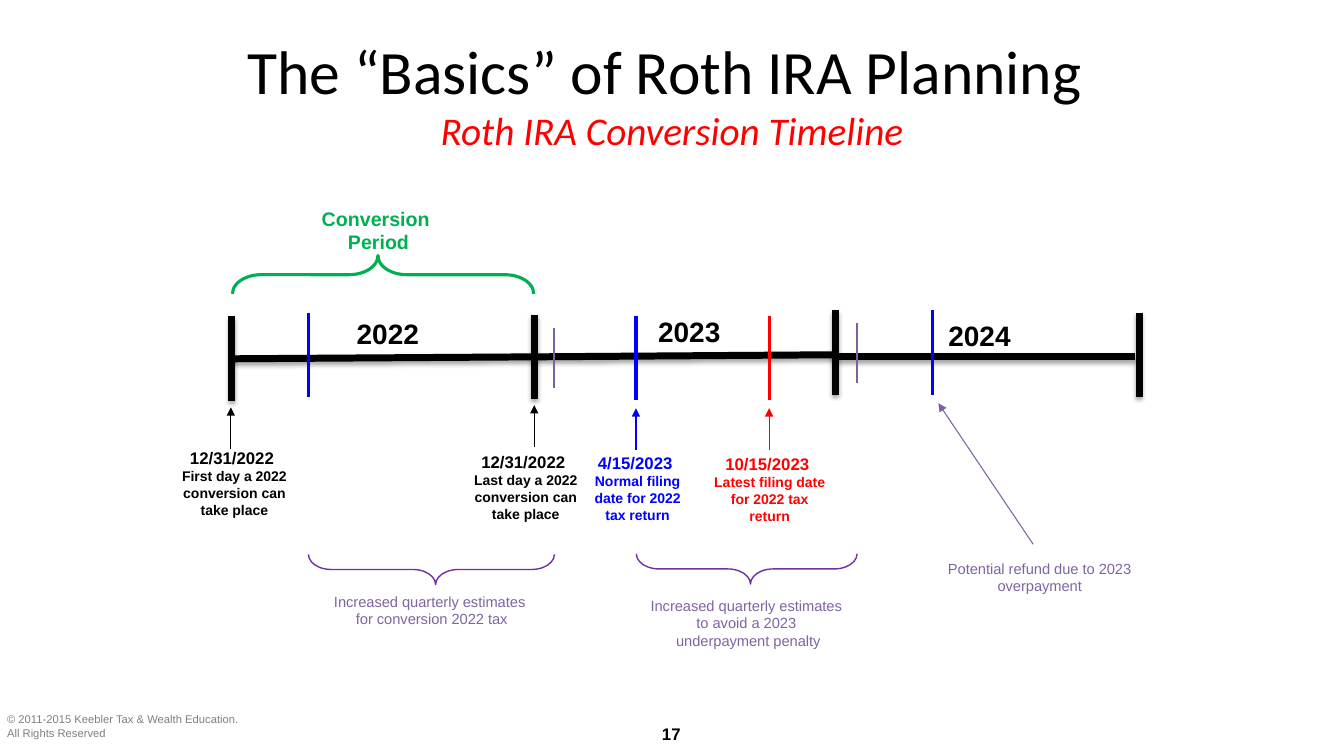
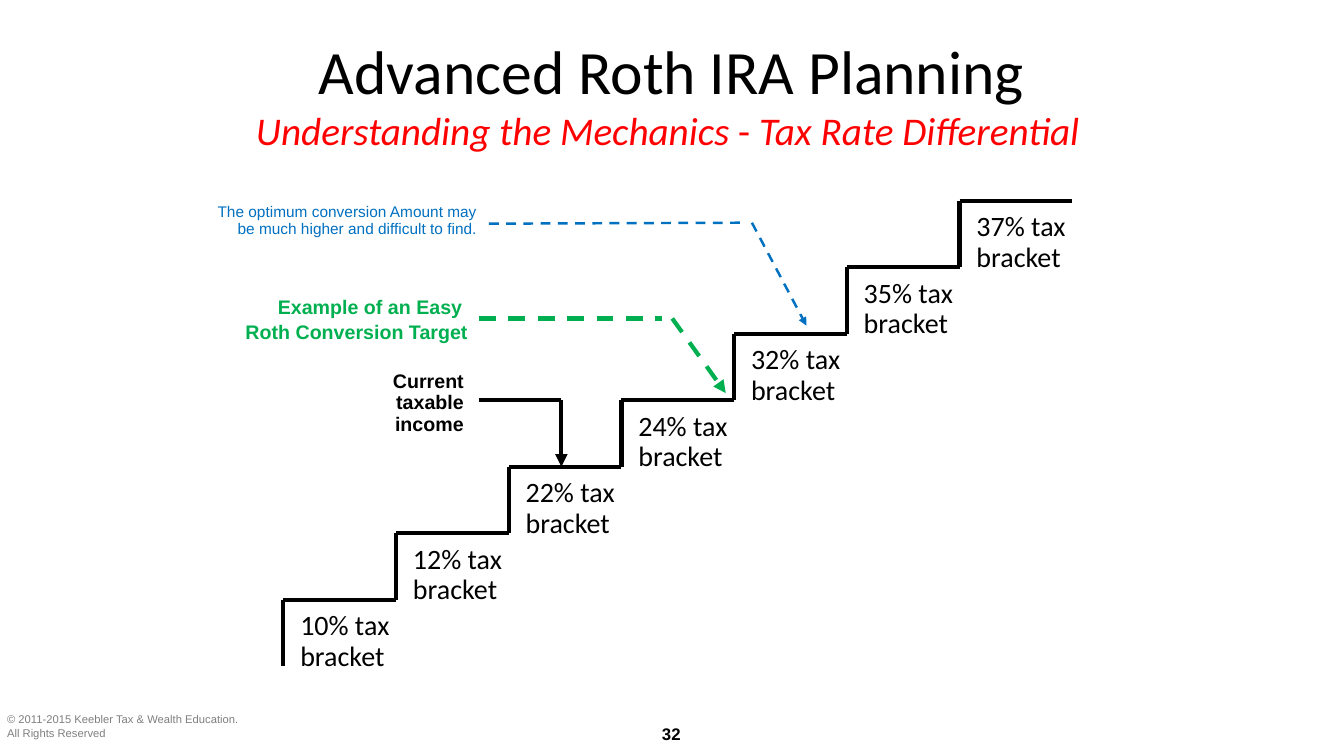
import lxml.etree
import pptx
import pptx.dml.color
import pptx.enum.dml
import pptx.enum.shapes
import pptx.enum.text
import pptx.oxml.ns
import pptx.util

Pt = pptx.util.Pt
qn = pptx.oxml.ns.qn
ALIGN = pptx.enum.text.PP_ALIGN

BLACK, RED, GREEN, BLUE = "000000", "FF0000", "00B050", "0000FF"
VIOLET, LILAC, PLUM, SKY, GREY = "7030A0", "7D60A0", "8064A2", "0070C0", "7F7F7F"

TITLE = {"name": "Calibri", "size": 44, "bold": False, "italic": False, "color": BLACK}
SUBTITLE = {**TITLE, "size": 28, "italic": True, "color": RED}
BRACKET = {"name": "Calibri", "size": 20, "color": BLACK}
NOTE = {"name": "Arial", "size": 10.5, "color": PLUM}
STRONG = {"name": "Arial", "size": 12, "bold": True, "color": BLACK}
YEAR = {**STRONG, "size": 20}
HEADING = {**STRONG, "size": 14}
FOOTER = {"name": "Arial", "size": 8, "color": GREY}


def colour(value):
    return pptx.dml.color.RGBColor.from_string(value)


def format_font(font, values):
    for name, value in values.items():
        if name == "color":
            font.color.rgb = colour(value)
        else:
            setattr(font, name, Pt(value) if name == "size" else value)


def add_text(page, place, lines, values, align=ALIGN.LEFT, spacing=1.0, gap=0):
    box = page.shapes.add_textbox(*(Pt(length) for length in place))
    frame = box.text_frame
    frame.word_wrap = True
    for index, line in enumerate(lines):
        para = frame.paragraphs[0] if index == 0 else frame.add_paragraph()
        para.alignment = align
        para.line_spacing = spacing
        para.space_before = Pt(gap if index else 0)
        text, changes = line if isinstance(line, tuple) else (line, {})
        span = para.add_run()
        span.text = text
        format_font(span.font, {**values, **changes})


def add_line(page, start, end, hue, width, arrow=False, dashed=False, shadow=False):
    kind = pptx.enum.shapes.MSO_CONNECTOR.STRAIGHT
    connector = page.shapes.add_connector(kind, *(Pt(length) for length in (*start, *end)))
    connector.line.color.rgb = colour(hue)
    connector.line.width = Pt(width)
    if dashed:
        connector.line.dash_style = pptx.enum.dml.MSO_LINE.DASH
    properties = connector.element.spPr
    if arrow:
        outline = properties.find(qn("a:ln"))
        lxml.etree.SubElement(outline, qn("a:tailEnd"), type="triangle")
    effects = lxml.etree.SubElement(properties, qn("a:effectLst"))
    if shadow:
        outer = lxml.etree.SubElement(
            effects, qn("a:outerShdw"), blurRad=str(Pt(3.1)), dist=str(Pt(1.8)),
            dir="5400000", rotWithShape="0")
        tint = lxml.etree.SubElement(outer, qn("a:srgbClr"), val=BLACK)
        lxml.etree.SubElement(tint, qn("a:alpha"), val="35000")


def add_brace(page, left, top, width, height, hue, weight, rotation):
    shift = (width - height) / 2
    brace = page.shapes.add_shape(
        pptx.enum.shapes.MSO_SHAPE.RIGHT_BRACE,
        Pt(left + shift), Pt(top - shift), Pt(height), Pt(width))
    brace.rotation = rotation
    brace.adjustments[0] = 0.75
    brace.adjustments[1] = 0.483
    brace.fill.background()
    brace.line.color.rgb = colour(hue)
    brace.line.width = Pt(weight)
    brace.shadow.inherit = False


def add_page(deck, title, subtitle, number):
    page = deck.slides.add_slide(deck.slide_layouts[5])
    box = page.shapes.title
    place = {"left": 48, "top": 21.6, "width": 864, "height": 90}
    for name, value in place.items():
        setattr(box, name, Pt(value))
    frame = box.text_frame
    frame.vertical_anchor = pptx.enum.text.MSO_ANCHOR.MIDDLE
    para = frame.paragraphs[0]
    para.alignment = ALIGN.CENTER
    span = para.add_run()
    span.text = title
    format_font(span.font, TITLE)
    para.add_line_break()
    for text, italic in subtitle:
        span = para.add_run()
        span.text = text
        format_font(span.font, {**SUBTITLE, "italic": italic})
    copyright_lines = ["© 2011-2015 Keebler Tax & Wealth Education.", "All Rights Reserved"]
    add_text(page, (-2, 505.5, 190, 26.6), copyright_lines, FOOTER)
    add_text(page, (443.5, 513.4, 72, 21.6), [number], STRONG, ALIGN.CENTER)
    return page


def build_timeline(deck):
    page = add_page(deck, "The “Basics” of Roth IRA Planning ",
                    [("Roth IRA Conversion Timeline", True)], "17")

    for start, end in [((165.6, 256.3), (380.9, 254.9)),
                       ((381.6, 254.9), (596.9, 253.4)),
                       ((595.4, 254.9), (810.7, 254.9))]:
        add_line(page, start, end, BLACK, 5, shadow=True)

    year_tick = (60.3, BLACK, 5)
    filing_tick = (60, BLUE, 2.25)
    latest_tick = (60, RED, 2.25)
    estimate_tick = (43.2, LILAC, 1.5)
    for x, top, (height, hue, width) in [
            (165.6, 226, year_tick), (381.6, 224.8, year_tick),
            (596.9, 221.8, year_tick), (813.6, 223.3, year_tick),
            (220.3, 223.9, filing_tick), (454.3, 225.4, filing_tick),
            (666, 221.8, filing_tick), (549.4, 225.4, latest_tick),
            (396, 234, estimate_tick), (612, 230.4, estimate_tick)]:
        add_line(page, (x, top), (x, top + height), hue, width, shadow=width == 5)

    for x, top, hue in [(164.9, 291, BLACK), (381.6, 289.4, BLACK),
                        (454.3, 291.6, BLUE), (549.4, 291.6, RED)]:
        add_line(page, (x, top + 29.8), (x, top), hue, 0.75, arrow=True)
    add_line(page, (738, 388.8), (670.3, 288), LILAC, 0.75, arrow=True)

    for x, y, year in [(247.7, 222.5, "2022"), (463, 221, "2023"), (670.3, 223.9, "2024")]:
        add_text(page, (x, y, 72, 31), [year], YEAR)

    for x, y, width, hue, date, meaning in [
            (119.5, 316.1, 95.8, BLACK, "12/31/2022 ", "First day a 2022 conversion can take place"),
            (327.6, 319, 95.8, BLACK, "12/31/2022 ", "Last day a 2022 conversion can take place"),
            (411.1, 319.7, 88.6, BLUE, "4/15/2023 ", "Normal filing date for 2022 tax return"),
            (499.7, 320.4, 100.1, RED, "10/15/2023 ", "Latest filing date for 2022 tax return")]:
        add_text(page, (x, y, width, 58.3), [date, (meaning, {"size": 10})],
                 {**STRONG, "color": hue}, ALIGN.CENTER)

    add_text(page, (222.5, 144, 95.8, 41), ["Conversion ", "Period"],
             {**HEADING, "color": GREEN}, ALIGN.CENTER)
    add_brace(page, 166, 182.5, 215.3, 27.4, GREEN, 2.25, 270)
    add_brace(page, 220.3, 396, 175.7, 21.6, VIOLET, 1, 90)
    add_brace(page, 454.5, 395.6, 157.7, 21.6, VIOLET, 1, 90)

    for x, y, lines in [
            (221, 419.8, ["Increased quarterly estimates ", "for conversion 2022 tax"]),
            (447.1, 422.6, ["Increased quarterly estimates ", "to avoid a 2023 ",
                            "underpayment penalty"]),
            (655.2, 396, ["Potential refund due to 2023 overpayment"])]:
        add_text(page, (x, y, 175, 16 * len(lines)), lines, NOTE, ALIGN.CENTER)


def build_brackets(deck):
    page = add_page(deck, "Advanced Roth IRA Planning",
                    [("Understanding the Mechanics ", True), ("- ", False),
                     ("Tax Rate Differential ", True)], "32")

    run, rise = 80.5, 47.5
    for index, rate in enumerate([10, 12, 22, 24, 32, 35, 37]):
        x, y = 202.4 + index * run, 428.4 - index * rise
        add_line(page, (x, y + rise), (x, y), BLACK, 3)
        add_line(page, (x, y), (x + run, y), BLACK, 3)
        add_text(page, (x + 5, y + 5, 103, 50.4), [f"{rate}% tax bracket"], BRACKET, spacing=0.9)

    for start, corner, restart, end, hue, width, dashed in [
            ((342, 285.8), (401, 285.8), (401, 285.8), (401, 333.4), BLACK, 3, False),
            ((342, 227.5), (473, 227.5), (480.2, 227.5), (518.4, 280.8), GREEN, 3, True),
            ((528.5, 159.1), (344.9, 159.8), (537.1, 159.1), (576, 232.6), SKY, 1.75, True)]:
        add_line(page, start, corner, hue, width, dashed=dashed)
        add_line(page, restart, end, hue, width, arrow=True, dashed=dashed)

    for place, lines, values in [
            ((229, 262.1, 109.4, 53.3), ["Current taxable income"], HEADING),
            ((149.8, 208.8, 191.5, 41), ["Example of an Easy ", "Roth Conversion Target"],
             {**HEADING, "color": GREEN}),
            ((144, 142.6, 203.8, 31),
             ["The optimum conversion Amount may be much higher and difficult to find."],
             {**NOTE, "size": 11, "color": SKY})]:
        add_text(page, place, lines, values, ALIGN.RIGHT, spacing=0.9, gap=2.8)


def main():
    deck = pptx.Presentation()
    deck.slide_width, deck.slide_height = Pt(960), Pt(540)
    build_timeline(deck)
    build_brackets(deck)
    deck.save("out.pptx")


if __name__ == "__main__":
    main()
